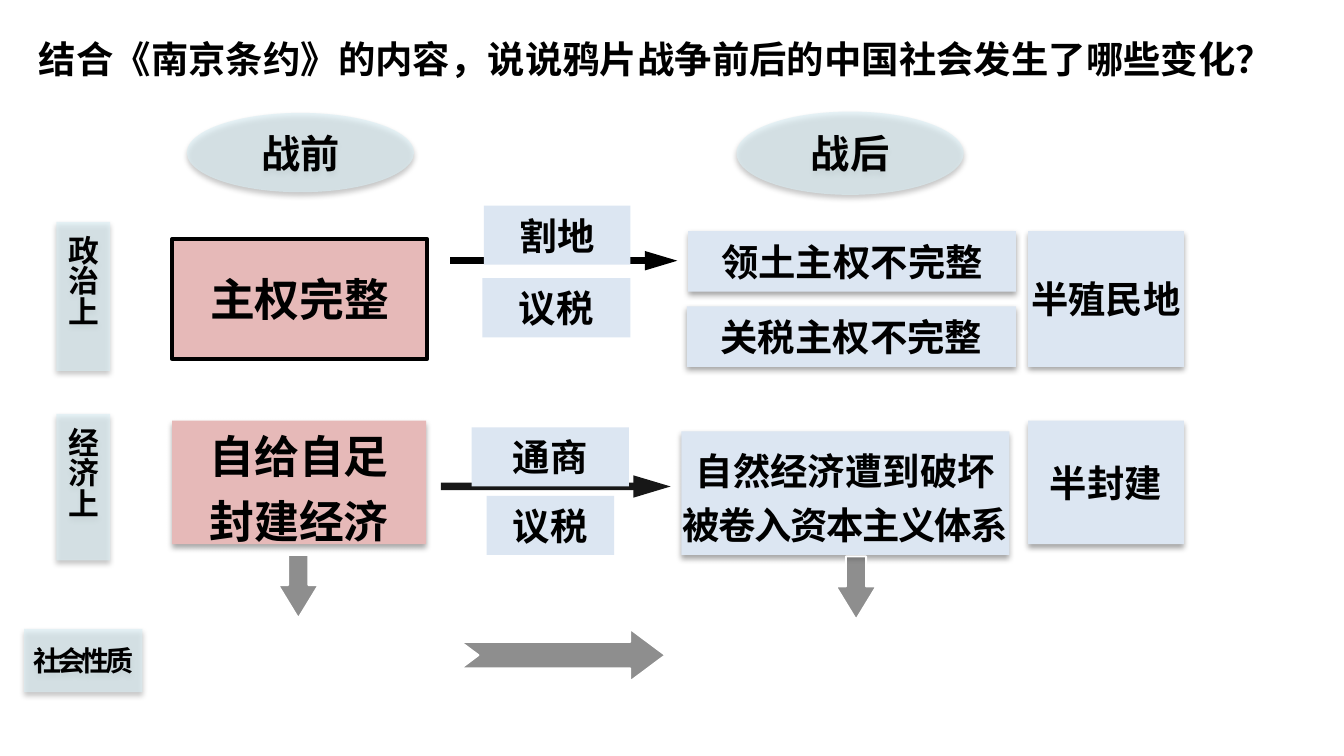
from dataclasses import dataclass

from lxml import etree
from pptx import Presentation
from pptx.dml.color import RGBColor
from pptx.enum.shapes import MSO_CONNECTOR, MSO_SHAPE
from pptx.enum.text import MSO_ANCHOR, PP_ALIGN
from pptx.oxml.ns import qn
from pptx.shapes.autoshape import Shape
from pptx.slide import Slide
from pptx.util import Inches, Pt

RECT = MSO_SHAPE.RECTANGLE
OVAL = MSO_SHAPE.OVAL
DOWN = MSO_SHAPE.DOWN_ARROW
NOTCH = MSO_SHAPE.NOTCHED_RIGHT_ARROW
LINE = MSO_CONNECTOR.STRAIGHT
LEFT = PP_ALIGN.LEFT
CENTER = PP_ALIGN.CENTER
MIDDLE = MSO_ANCHOR.MIDDLE


@dataclass(frozen=True)
class Theme:
    font: str = "Noto Sans CJK SC"
    ink: str = "000000"
    white: str = "FFFFFF"
    pale: str = "DBEEF4"
    blue: str = "DCE6F2"
    pink: str = "E6B9B8"
    gray: str = "595959"
    big: float = 24
    head: float = 21
    body: float = 20
    side: float = 16.5
    small: float = 15


T = Theme()


@dataclass(frozen=True)
class Box:
    text: str
    at: tuple[float, float, float, float]
    fill: str = T.blue
    size: float = T.body
    kind: MSO_SHAPE = RECT
    alpha: int = 100
    edge: float = 0
    shade: bool = True
    wrap: bool = False
    tall: bool = False
    lead: float = 1
    track: tuple[float, ...] = (0, 0)


@dataclass(frozen=True)
class Block:
    kind: MSO_SHAPE
    at: tuple[float, float, float, float]
    head: float


@dataclass(frozen=True)
class Arrow:
    start: tuple[float, float]
    end: tuple[float, float]
    width: float
    alpha: int = 100


def label(text: str, left: float, top: float, wide: float) -> Box:
    return Box(text, (left, top, wide, 0.44), shade=False, wrap=True)


def side(text: str, top: float, high: float) -> Box:
    return Box(text, (0.42, top, 0.4, high), T.pale, T.side, alpha=64, tall=True)


def stage(text: str, left: float, top: float, high: float) -> Box:
    return Box(text, (left, top, 1.69, high), T.pale, T.head, OVAL, 64)


ITEMS = (
    side("政治上", 1.65, 1.11),
    Box("关税主权不完整", (5.11, 2.28, 2.45, 0.45)),
    label("议税", 3.59, 2.07, 1.1),
    side("经济上", 3.08, 1.09),
    Box("自给自足\n封建经济", (1.28, 3.13, 1.89, 0.92), T.pink, T.big, lead=1.2),
    Box("主权完整", (1.28, 1.78, 1.9, 0.89), T.pink, T.big, edge=2, shade=False),
    Box("领土主权不完整", (5.12, 1.72, 2.44, 0.45)),
    Arrow((3.35, 1.94), (5.04, 1.94), 3.5),
    label("割地", 3.6, 1.53, 1.09),
    Box("自然经济遭到破坏\n被卷入资本主义体系", (5.07, 3.21, 2.44, 0.92),
        lead=1.2, track=(0, -0.8)),
    Arrow((3.28, 3.62), (4.99, 3.62), 4, 91),
    label("通商", 3.51, 3.18, 1.17),
    label("议税", 3.62, 3.69, 0.95),
    Block(DOWN, (2.07, 4.13, 0.3, 0.47), 0.82),
    stage("战前", 1.39, 0.84, 0.59),
    stage("战后", 5.48, 0.83, 0.62),
    Box("半殖民地", (7.65, 1.72, 1.16, 1.01)),
    Box("半封建", (7.65, 3.13, 1.16, 0.92)),
    Block(DOWN, (6.22, 4.14, 0.3, 0.47), 0.82),
    Box("社会性质", (0.18, 4.68, 0.88, 0.47), T.pale, T.small, alpha=64, track=(-2.2,)),
    Block(NOTCH, (3.43, 4.68, 1.52, 0.39), 0.67),
)


def fade(node: etree._Element, alpha: int) -> None:
    if alpha < 100:
        tint = next(node.iter(qn("a:srgbClr")))
        etree.SubElement(tint, qn("a:alpha"), val=str(alpha * 1000))


def shadow(shape: Shape) -> None:
    effects = shape._element.spPr.find(qn("a:effectLst"))
    cast = etree.SubElement(effects, qn("a:outerShdw"), blurRad=str(Pt(3.1)),
                            dist=str(Pt(1.8)), dir="5400000", rotWithShape="0")
    etree.SubElement(cast, qn("a:srgbClr"), val=T.ink)
    fade(cast, 35)


def write(shape: Shape, text: str, *, size: float = T.body, align: PP_ALIGN = CENTER,
          wrap: bool = True, lead: float = 1, tall: bool = False,
          track: tuple[float, ...] = (0, 0)) -> None:
    frame = shape.text_frame
    frame.word_wrap = wrap
    frame.vertical_anchor = MIDDLE
    if tall:
        frame._txBody.bodyPr.set("vert", "eaVert")
    for i, (line, gap) in enumerate(zip(text.split("\n"), track)):
        para = frame.add_paragraph() if i else frame.paragraphs[0]
        para.alignment = align
        para.line_spacing = lead
        run = para.add_run()
        run.text = line
        font = run.font
        font.name = T.font
        font.size = Pt(size)
        font.bold = True
        font.color.rgb = RGBColor.from_string(T.ink)
        props = run._r.get_or_add_rPr()
        etree.SubElement(props, qn("a:ea"), typeface=T.font)
        if gap:
            props.set("spc", str(round(gap * 100)))


def form(slide: Slide, kind: MSO_SHAPE, at: tuple[float, ...], fill: str,
         alpha: int, edge: float, hue: str) -> Shape:
    shape = slide.shapes.add_shape(kind, *map(Inches, at))
    shape.shadow.inherit = False
    shape.fill.solid()
    shape.fill.fore_color.rgb = RGBColor.from_string(fill)
    fade(shape._element.spPr, alpha)
    if edge:
        shape.line.color.rgb = RGBColor.from_string(hue)
        shape.line.width = Pt(edge)
    else:
        shape.line.fill.background()
    return shape


def draw(slide: Slide, item: Box | Block | Arrow) -> None:
    if isinstance(item, Box):
        shape = form(slide, item.kind, item.at, item.fill, item.alpha, item.edge, T.ink)
        if item.shade:
            shadow(shape)
        write(shape, item.text, size=item.size, wrap=item.wrap, lead=item.lead,
              tall=item.tall, track=item.track)
    elif isinstance(item, Block):
        shape = form(slide, item.kind, item.at, T.gray, 68, 1, T.white)
        shape.adjustments[0] = 0.5
        shape.adjustments[1] = item.head
    else:
        wire = slide.shapes.add_connector(LINE, *map(Inches, item.start + item.end))
        wire.line.color.rgb = RGBColor.from_string(T.ink)
        wire.line.width = Pt(item.width)
        props = wire._element.spPr
        fade(props, item.alpha)
        etree.SubElement(props.find(qn("a:ln")), qn("a:tailEnd"),
                         type="triangle", w="med", len="lg")
        etree.SubElement(props, qn("a:effectLst"))


def main() -> None:
    """Build the slide on China before and after the war."""
    deck = Presentation()
    deck.slide_width, deck.slide_height = Inches(10), Inches(10 * 9 / 16)
    slide = deck.slides.add_slide(deck.slide_layouts[6])
    for item in ITEMS:
        draw(slide, item)
    title = slide.shapes.add_textbox(*map(Inches, (0.22, 0.23, 9.68, 0.41)))
    frame = title.text_frame
    frame.margin_left = frame.margin_right = Inches(0.07)
    frame.margin_top = frame.margin_bottom = Inches(0.04)
    write(title, "结合《南京条约》的内容，说说鸦片战争前后的中国社会发生了哪些变化？", align=LEFT)
    deck.save("out.pptx")


if __name__ == "__main__":
    main()
